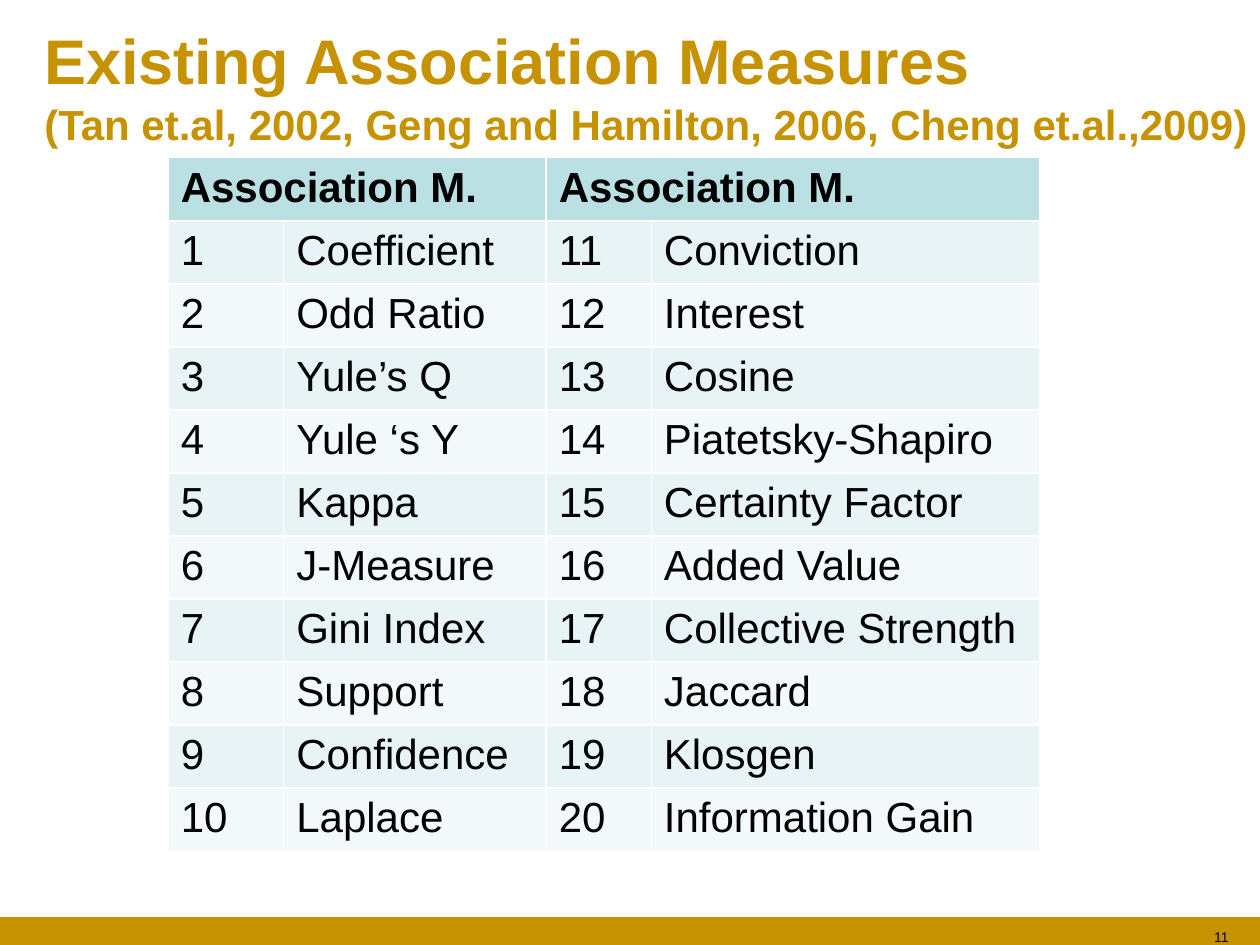
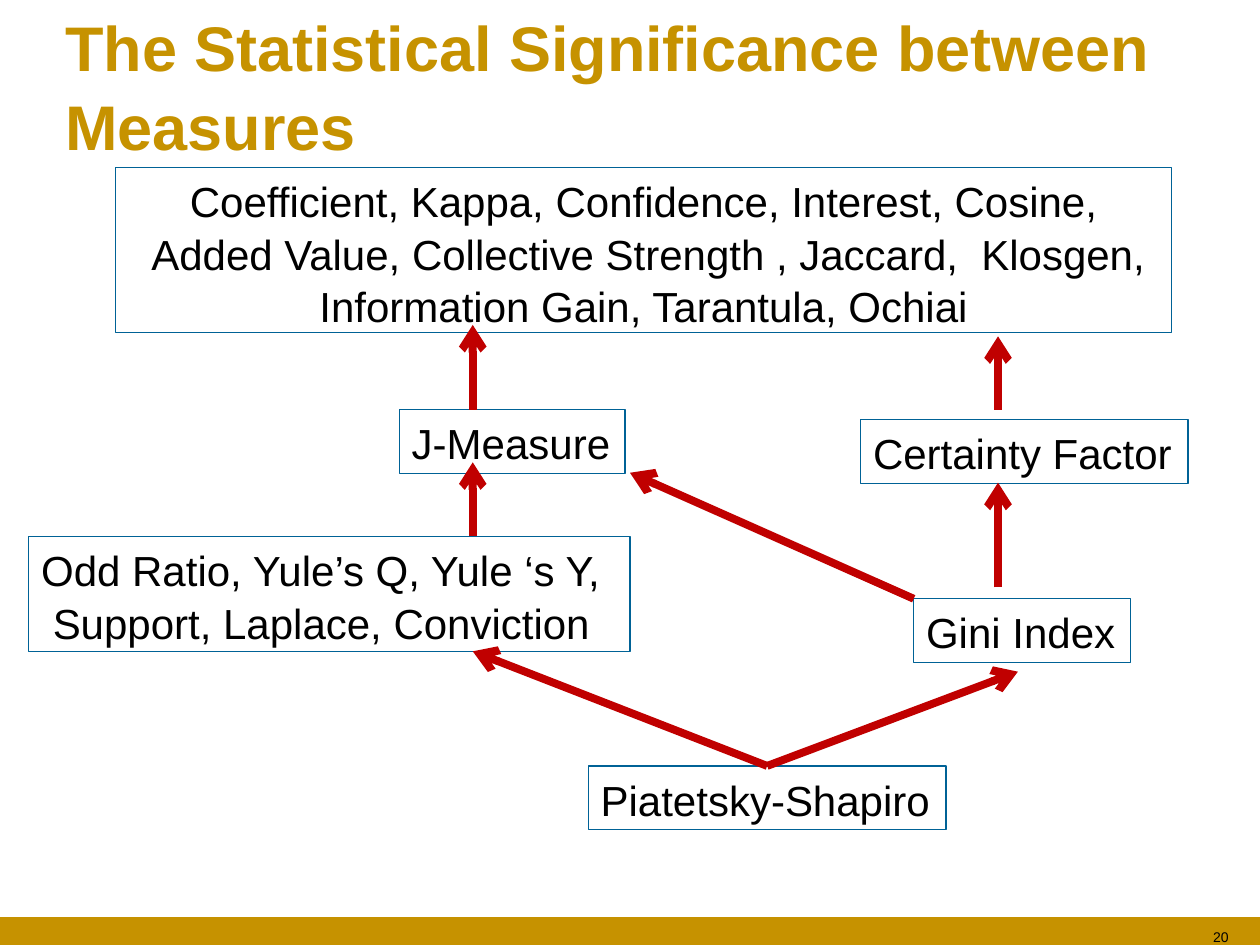
from pptx import Presentation
from pptx.dml.color import RGBColor
from pptx.enum.shapes import MSO_CONNECTOR, MSO_SHAPE
from pptx.enum.text import MSO_ANCHOR, MSO_AUTO_SIZE, PP_ALIGN
from pptx.oxml.ns import qn
from pptx.util import Cm, Pt
from lxml import etree

LEFT, CENTER, RIGHT = PP_ALIGN.LEFT, PP_ALIGN.CENTER, PP_ALIGN.RIGHT
MIDDLE, NO_AUTOSIZE = MSO_ANCHOR.MIDDLE, MSO_AUTO_SIZE.NONE
RECTANGLE, STRAIGHT = MSO_SHAPE.RECTANGLE, MSO_CONNECTOR.STRAIGHT

FONT = "Arial"
GOLD, BLACK, BOX_BLUE, ARROW_RED = "C69200", "000000", "006296", "C00000"
HEADER_FILL, ROW_FILLS = "BBE0E3", ("E7F3F4", "F3F9FA")
LINE_SPACING = 1.04
TITLE_ONLY = 5
TOP_SIDE = 0

MEASURES = [
    "Coefficient", "Odd Ratio", "Yule’s Q", "Yule ‘s Y", "Kappa",
    "J-Measure", "Gini Index", "Support", "Confidence", "Laplace",
    "Conviction", "Interest", "Cosine", "Piatetsky-Shapiro", "Certainty Factor",
    "Added Value", "Collective Strength", "Jaccard", "Klosgen", "Information Gain",
]

MEASURE_GROUPS = {
    "strongest": ((1.75, 0, 21.29, 3.33), CENTER, [
        "Coefficient, Kappa, Confidence, Interest, Cosine,",
        " Added Value, Collective Strength , Jaccard,  Klosgen,",
        "Information Gain, Tarantula, Ochiai",
    ]),
    "odds": ((0, 7.44, 12.12, 2.31), LEFT, [
        "Odd Ratio, Yule’s Q, Yule ‘s Y,",
        " Support, Laplace, Conviction",
    ]),
    "certainty": ((16.77, 5.08, 6.6, 1.29), LEFT, ["Certainty Factor"]),
    "piatetsky": ((11.28, 12.06, 7.21, 1.29), LEFT, ["Piatetsky-Shapiro"]),
    "gini": ((17.84, 8.69, 4.37, 1.29), LEFT, ["Gini Index"]),
    "j_measure": ((7.47, 4.88, 4.55, 1.29), LEFT, ["J-Measure"]),
}

LEFT_LANE, RIGHT_LANE = 8.95, 19.54
PIATETSKY_TOP = (14.89, 12.06)
ARROWS = [
    (PIATETSKY_TOP, (LEFT_LANE, 9.75), "piatetsky"),
    (PIATETSKY_TOP, (19.94, 10.16), "piatetsky"),
    ((RIGHT_LANE, 8.46), (RIGHT_LANE, 6.35), None),
    ((RIGHT_LANE, 4.88), (RIGHT_LANE, 3.4), None),
    ((LEFT_LANE, 4.88), (LEFT_LANE, 3.17), None),
    ((LEFT_LANE, 7.42), (LEFT_LANE, 5.94), None),
    ((17.84, 8.69), (12.12, 6.15), None),
]


def color(hex_value):
    """Return the colour for a hex string."""
    return RGBColor.from_string(hex_value)


def apply_format(target, values):
    """Set every attribute of the target from a dict."""
    for name, value in values.items():
        setattr(target, name, value)


def add_text(paragraph, text, size, hex_value=BLACK, bold=False):
    """Add a formatted run to a paragraph."""
    run = paragraph.add_run()
    run.text = text
    apply_format(run.font, {"name": FONT, "size": Pt(size), "bold": bold})
    run.font.color.rgb = color(hex_value)


def add_master_band(presentation, slide):
    """Put the gold bottom band on the slide master."""
    band = slide.shapes.add_shape(RECTANGLE, 0, Cm(18.49), Cm(25.4), Cm(0.56))
    band.shadow.inherit = False
    band.fill.solid()
    band.fill.fore_color.rgb = color(GOLD)
    band.line.fill.background()
    presentation.slide_master.element.cSld.spTree.insert(2, band.element)


def add_title(slide, box, lines):
    """Format the title placeholder and fill it with (text, size) lines."""
    title = slide.shapes.title
    apply_format(title, dict(zip(("left", "top", "width", "height"), map(Cm, box))))
    frame = title.text_frame
    apply_format(frame, {"vertical_anchor": MIDDLE, "auto_size": NO_AUTOSIZE,
                         "word_wrap": True})
    paragraph = frame.paragraphs[0]
    apply_format(paragraph, {"alignment": LEFT, "line_spacing": LINE_SPACING})
    for index, (text, size) in enumerate(lines):
        if index:
            paragraph.add_line_break()
        add_text(paragraph, text, size, GOLD, True)


def add_page_number(slide, number):
    """Write the page number over the band."""
    box = slide.shapes.add_textbox(Cm(21.41), Cm(18.59), Cm(3.61), Cm(0.46))
    box.text_frame.word_wrap = True
    paragraph = box.text_frame.paragraphs[0]
    paragraph.alignment = RIGHT
    add_text(paragraph, str(number), 8)


def start_slide(presentation, title_box, title_lines, number):
    """Add a slide with its title and page number."""
    slide = presentation.slides.add_slide(presentation.slide_layouts[TITLE_ONLY])
    add_title(slide, title_box, title_lines)
    add_page_number(slide, number)
    return slide


def fill_cell(cell, text, fill, bold=False):
    """Write one table cell on a plain fill."""
    cell.fill.solid()
    cell.fill.fore_color.rgb = color(fill)
    add_text(cell.text_frame.paragraphs[0], text, 24, bold=bold)


def add_measure_table(slide, left, top, column_widths, first, names):
    """Add a numbered table of measures under a merged header."""
    header_height, row_height = 1.18, 1.24
    height = header_height + row_height * len(names)
    table = slide.shapes.add_table(len(names) + 1, 2, Cm(left), Cm(top),
                                   Cm(sum(column_widths)), Cm(height)).table
    for column, width in zip(table.columns, column_widths):
        column.width = Cm(width)
    for index, row in enumerate(table.rows):
        row.height = Cm(row_height if index else header_height)
    table.cell(0, 0).merge(table.cell(0, 1))
    fill_cell(table.cell(0, 0), "Association M.", HEADER_FILL, True)
    for index, name in enumerate(names):
        for column, text in enumerate((str(first + index), name)):
            fill_cell(table.cell(index + 1, column), text, ROW_FILLS[index % 2])


def add_measure_box(slide, left, top, width, height, alignment, lines):
    """Add an outlined box holding a group of measures."""
    box = slide.shapes.add_textbox(Cm(left), Cm(top), Cm(width), Cm(height))
    box.line.color.rgb = color(BOX_BLUE)
    box.line.width = Pt(0.75)
    frame = box.text_frame
    frame.word_wrap = True
    if alignment == LEFT:
        frame.margin_right = 0
    for index, line in enumerate(lines):
        paragraph = frame.add_paragraph() if index else frame.paragraphs[0]
        apply_format(paragraph, {"alignment": alignment, "line_spacing": LINE_SPACING})
        add_text(paragraph, line, 24)
    return box


def add_arrow(slide, start, end):
    """Add a thick red arrow between two points."""
    arrow = slide.shapes.add_connector(STRAIGHT, *map(Cm, start + end))
    arrow.line.color.rgb = color(ARROW_RED)
    arrow.line.width = Pt(4.5)
    etree.SubElement(arrow.line._get_or_add_ln(), qn("a:tailEnd"), type="arrow")
    etree.SubElement(arrow.element.spPr, qn("a:effectLst"))
    return arrow


def add_significance_diagram(slide, left, top):
    """Draw the boxes and arrows that rank the measures."""
    boxes = {}
    for name, ((x, y, width, height), alignment, lines) in MEASURE_GROUPS.items():
        boxes[name] = add_measure_box(slide, left + x, top + y, width, height,
                                      alignment, lines)
    for start, end, source in ARROWS:
        arrow = add_arrow(slide, (left + start[0], top + start[1]),
                          (left + end[0], top + end[1]))
        if source:
            arrow.begin_connect(boxes[source], TOP_SIDE)


def build_measures_slide(presentation):
    """Build the slide listing the association measures."""
    slide = start_slide(presentation, (0.64, 0.28, 25.4, 2.82), [
        ("Existing Association Measures ", 36),
        ("(Tan et.al, 2002, Geng and Hamilton, 2006, Cheng et.al.,2009)", 24),
    ], 11)
    add_measure_table(slide, 3.39, 3.18, (2.33, 7.2), 1, MEASURES[:10])
    add_measure_table(slide, 11.01, 3.18, (2.12, 7.83), 11, MEASURES[10:])
    return slide


def build_significance_slide(presentation):
    """Build the slide comparing the measures."""
    slide = start_slide(presentation, (1.06, 0.03, 23.07, 3.33), [
        ("The Statistical Significance between Measures", 36),
    ], 20)
    add_significance_diagram(slide, 0.58, 3.38)


def main():
    """Build and save the presentation."""
    presentation = Presentation()
    apply_format(presentation, {"slide_width": Cm(25.4), "slide_height": Cm(19.05)})
    first_slide = build_measures_slide(presentation)
    add_master_band(presentation, first_slide)
    build_significance_slide(presentation)
    presentation.save("out.pptx")


if __name__ == "__main__":
    main()
